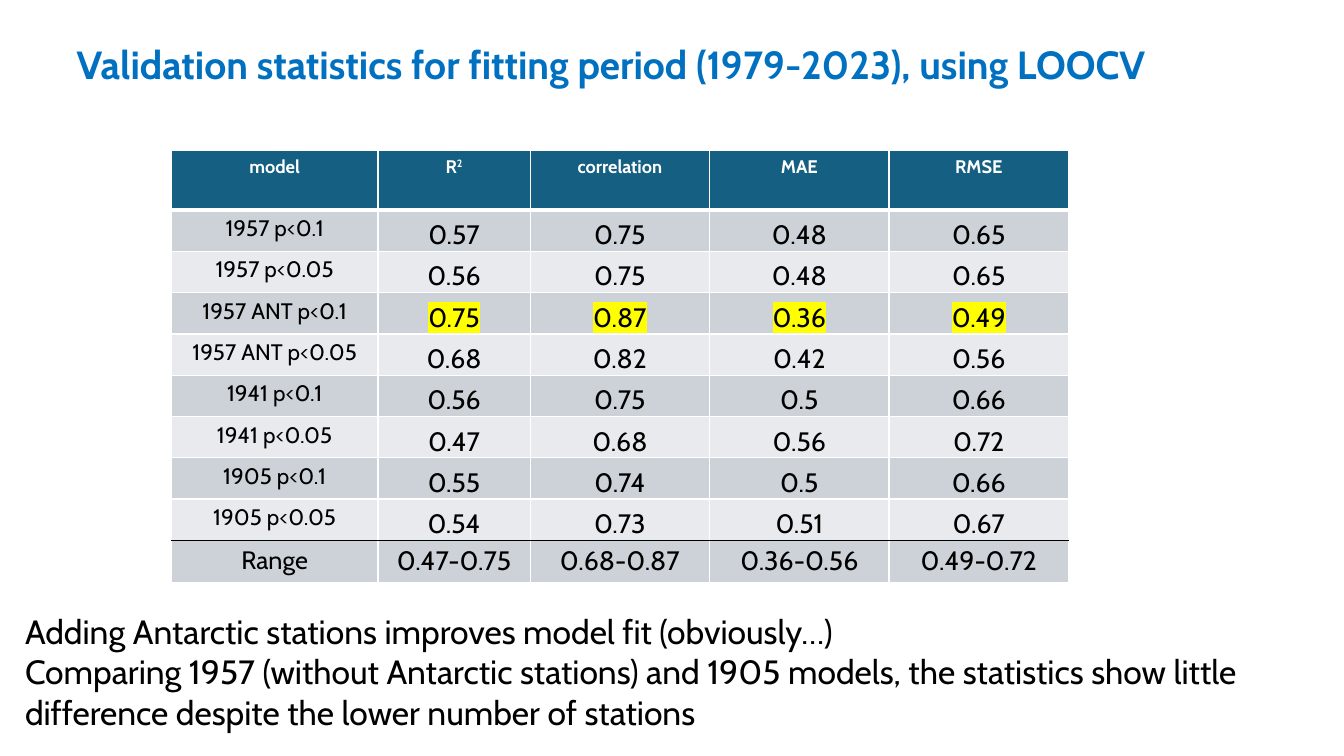
from dataclasses import dataclass

from lxml.etree import SubElement
from pptx import Presentation
from pptx.dml.color import RGBColor
from pptx.enum.text import MSO_ANCHOR, PP_ALIGN
from pptx.oxml.ns import qn
from pptx.util import Pt

FONT = "Cabin"
HUES = {
    "title": "0070C0", "head": "156082", "dark": "CCD2D8", "light": "E8EAED",
    "white": "FFFFFF", "black": "000000", "mark": "FFFF00",
}
WIDTHS = (147.6, 108.7, 128.2, 128.2, 128.2)
HEAD, ROW = 42.5, 29.5


@dataclass
class Style:
    size: float
    hue: str = "black"
    bold: bool = False


@dataclass
class Model:
    name: str
    stats: tuple[str, ...]
    best: bool = False


MODELS = [
    Model("1957 p<0.1", ("0.57", "0.75", "0.48", "0.65")),
    Model("1957 p<0.05", ("0.56", "0.75", "0.48", "0.65")),
    Model("1957 ANT p<0.1", ("0.75", "0.87", "0.36", "0.49"), best=True),
    Model("1957 ANT p<0.05", ("0.68", "0.82", "0.42", "0.56")),
    Model("1941 p<0.1", ("0.56", "0.75", "0.5", "0.66")),
    Model("1941 p<0.05", ("0.47", "0.68", "0.56", "0.72")),
    Model("1905 p<0.1", ("0.55", "0.74", "0.5", "0.66")),
    Model("1905 p<0.05", ("0.54", "0.73", "0.51", "0.67")),
]
RANGE = Model("Range", ("0.47-0.75", "0.68-0.87", "0.36-0.56", "0.49-0.72"))
NOTES = (
    "Adding Antarctic stations improves model fit (obviously…)",
    "Comparing 1957 (without Antarctic stations) and 1905 models, the statistics "
    "show little difference despite the lower number of stations",
)


def set_font(para, style: Style) -> None:
    font = para.font
    font.name, font.size, font.bold = FONT, Pt(style.size), style.bold
    font.color.rgb = RGBColor.from_string(HUES[style.hue])


def set_edges(cell, top: str, base: str, thick: float) -> None:
    """Draw the four borders; thick is the width of the bottom one."""
    props = cell._tc.get_or_add_tcPr()
    edges = (("L", "white", 1), ("R", "white", 1), ("T", top, 1), ("B", base, thick))
    for spot, (side, hue, width) in enumerate(edges):
        line = SubElement(props, qn(f"a:ln{side}"), w=str(Pt(width)))
        fill = SubElement(line, qn("a:solidFill"))
        SubElement(fill, qn("a:srgbClr"), val=HUES[hue])
        props.insert(spot, line)


def fill_cell(cell, text: str, style: Style, fill: str, top: str = "white",
              base: str = "white", thick: float = 1) -> None:
    cell.fill.solid()
    cell.fill.fore_color.rgb = RGBColor.from_string(HUES[fill])
    set_edges(cell, top, base, thick)
    para = cell.text_frame.paragraphs[0]
    para.alignment = PP_ALIGN.CENTER
    para.add_run().text = text
    set_font(para, style)


def sink_text(cell) -> None:
    """Seat a value on the bottom edge of its cell."""
    cell.vertical_anchor = MSO_ANCHOR.BOTTOM
    cell.margin_left = cell.margin_right = cell.margin_top = Pt(0.7)
    cell.margin_bottom = 0


def mark_run(run) -> None:
    light = SubElement(run._r.get_or_add_rPr(), qn("a:highlight"))
    SubElement(light, qn("a:srgbClr"), val=HUES["mark"])


def add_title(slide) -> None:
    title = slide.shapes.title
    title.left, title.top, title.width, title.height = Pt(47.5), Pt(28.8), Pt(828), Pt(38.2)
    frame = title.text_frame
    frame.text = "Validation statistics for fitting period (1979-2023), using LOOCV"
    frame.vertical_anchor = MSO_ANCHOR.MIDDLE
    para = frame.paragraphs[0]
    para.alignment, para.line_spacing = PP_ALIGN.LEFT, 0.9
    set_font(para, Style(28, "title", True))


def add_stats(slide) -> None:
    rows = [*MODELS, RANGE]
    high = HEAD + ROW * len(rows)
    table = slide.shapes.add_table(len(rows) + 1, len(WIDTHS), Pt(122.4), Pt(107.6),
                                   Pt(sum(WIDTHS)), Pt(high)).table
    for col, width in zip(table.columns, WIDTHS):
        col.width = Pt(width)
    for spot, row in enumerate(table.rows):
        row.height = Pt(ROW if spot else HEAD)

    for col, text in enumerate(("model", "R", "correlation", "MAE", "RMSE")):
        fill_cell(table.cell(0, col), text, Style(13, "white", True), "head", thick=3)
    power = table.cell(0, 1).text_frame.paragraphs[0].add_run()
    power.text = "2"
    power._r.get_or_add_rPr().set("baseline", "30000")

    for row, model in enumerate(rows, 1):
        last = model is RANGE
        fill = "dark" if row % 2 else "light"
        top = "black" if last else "white"
        base = "black" if model is MODELS[-1] else "white"
        for col, text in enumerate((model.name, *model.stats)):
            cell = table.cell(row, col)
            size = 19 if col else 18 if last else 16
            fill_cell(cell, text, Style(size), fill, top, base)
            if col and not last:
                sink_text(cell)
            if col and model.best:
                mark_run(cell.text_frame.paragraphs[0].runs[0])


def add_notes(slide) -> None:
    frame = slide.shapes.add_textbox(Pt(10.8), Pt(432.7), Pt(933.8), Pt(94.3)).text_frame
    frame.word_wrap = True
    frame.text = "\n".join(NOTES)
    for para in frame.paragraphs:
        set_font(para, Style(24))


def main() -> None:
    deck = Presentation()
    deck.slide_width, deck.slide_height = Pt(960), Pt(540)
    slide = deck.slides.add_slide(deck.slide_layouts[5])
    add_title(slide)
    add_stats(slide)
    add_notes(slide)
    deck.save("out.pptx")


if __name__ == "__main__":
    main()
